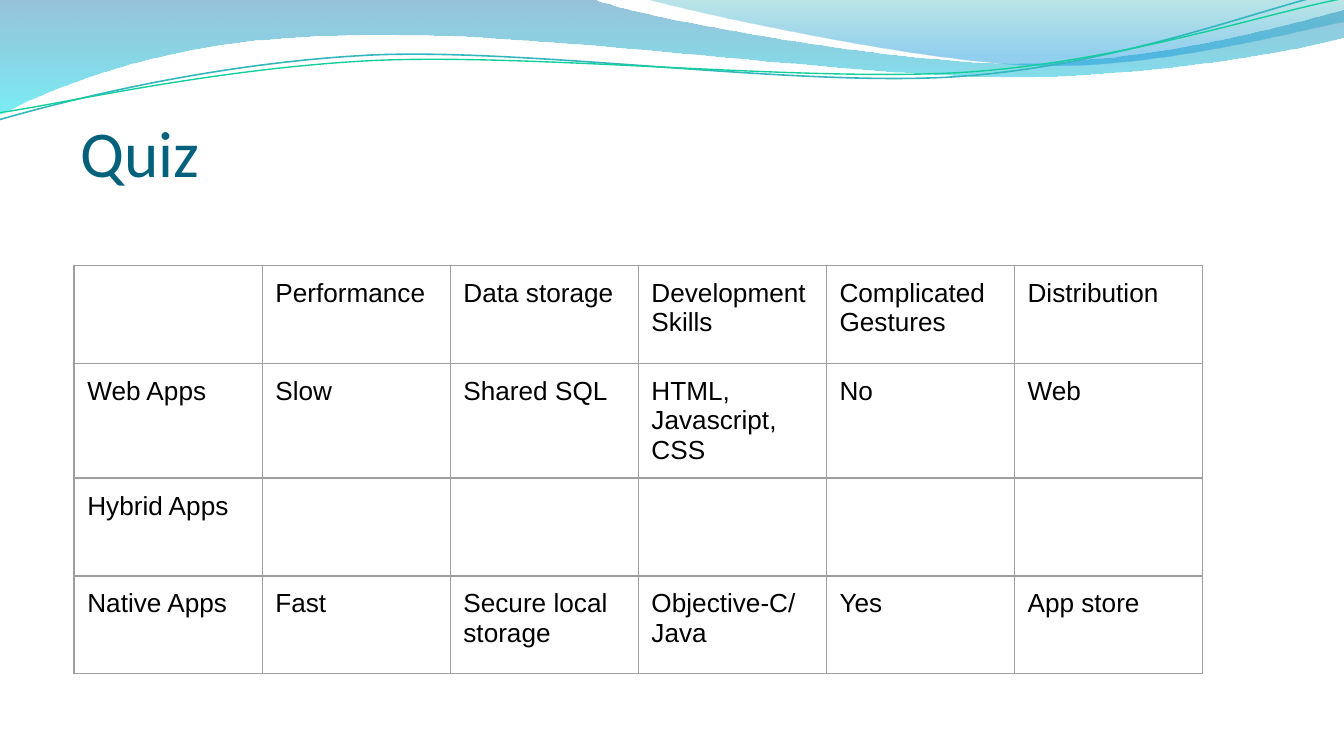
from lxml import etree
from pptx import Presentation
from pptx.dml.color import RGBColor
from pptx.enum.text import MSO_ANCHOR, MSO_AUTO_SIZE, PP_ALIGN
from pptx.oxml.ns import qn
from pptx.util import Cm, Pt

BOTTOM = MSO_ANCHOR.BOTTOM
NO_AUTOFIT = MSO_AUTO_SIZE.NONE
LEFT = PP_ALIGN.LEFT


def rgb(value):
    return RGBColor.from_string(value)


def add_wave(shapes, start, segments, close):
    """Draw segments in cm: 2 numbers make a line, 6 a cubic curve."""
    points = [(Cm(seg[k]), Cm(seg[k + 1])) for seg in segments for k in range(0, len(seg), 2)]
    builder = shapes.build_freeform(Cm(start[0]), Cm(start[1]))
    builder.add_line_segments(points, close=close)
    sp = builder.convert_to_shape()
    sp.shadow.inherit = False
    # Merge the three steps of each curve into one cubic segment
    steps = iter(list(sp._element.iter(qn("a:lnTo"))))
    for seg in segments:
        first = next(steps)
        if len(seg) == 6:
            first.tag = qn("a:cubicBezTo")
            for step in (next(steps), next(steps)):
                first.append(step[0])
                step.getparent().remove(step)
    return sp


prs = Presentation()
prs.slide_width, prs.slide_height = Cm(25.4), Cm(14.29)
s = prs.slides.add_slide(prs.slide_layouts[5])

# Translucent waves: start, segments, gradient stops (position, colour, opacity in %)
bands = [
    ((0, 0),
     [(11.18, -0.03), (12.09, 0.33, 16.87, 1.19, 19.25, 1.19),
      (21.67, 1.19, 24.33, 0.48, 25.4, 0.18), (25.43, 0.69),
      (24.97, 0.84, 22.1, 1.45, 18.95, 1.45), (15.8, 1.42, 9.7, 0.53, 6.53, 0.66),
      (3.28, 0.69, 1.17, 1.57, -0.03, 2.16), (0, 0)],
     [(0, "1476AB", 44), (100, "0CE0EC", 55)]),
    ((12.17, -0.03),
     [(12.93, 0.2, 17.32, 1.17, 19.53, 1.24), (21.74, 1.32, 24.41, 0.61, 25.4, 0.41),
      (25.4, 0), (12.17, -0.03)],
     [(0, "18A7B0", 29), (80, "0993DD", 44), (100, "0993DD", 44)]),
]
for start, segments, stops in bands:
    sp = add_wave(s.shapes, start, segments, True)
    sp.line.fill.background()
    sp.fill.gradient()
    sp.fill.gradient_angle = 270
    stop_list = next(sp._element.iter(qn("a:gsLst")))
    for old in list(stop_list):
        stop_list.remove(old)
    for pos, colour, opacity in stops:
        gs = etree.SubElement(stop_list, qn("a:gs"), pos=str(pos * 1000))
        clr = etree.SubElement(gs, qn("a:srgbClr"), val=colour)
        etree.SubElement(clr, qn("a:alpha"), val=str(opacity * 1000))

# Thin wave lines
wave_lines = [
    ((0, 2.26),
     [(1.22, 1.91, 4.01, 1.19, 7.04, 1.04), (10.06, 0.91, 15.04, 1.65, 18.08, 1.45),
      (21.16, 1.24, 23.85, 0.15, 25.35, -0.18)], "33B7BF", 0.85),
    ((0, 2.13),
     [(1.19, 1.96, 4.17, 1.27, 7.19, 1.14), (10.24, 1.02, 15.16, 1.55, 18.19, 1.37),
      (21.23, 1.17, 23.9, 0.25, 25.4, -0.03)], "10CF9B", 0.75),
]
for start, segments, colour, width in wave_lines:
    sp = add_wave(s.shapes, start, segments, False)
    sp.fill.background()
    sp.line.color.rgb = rgb(colour)
    sp.line.width = Pt(width)

# Title, in front of the waves
title = s.shapes.title
s.shapes._spTree.append(title._element)
title.left, title.top, title.width, title.height = Cm(1.27), Cm(0), Cm(22.86), Cm(3.86)
tf = title.text_frame
tf.auto_size = NO_AUTOFIT
tf.word_wrap = True
tf.vertical_anchor = BOTTOM
tf.margin_left = tf.margin_right = tf.margin_top = tf.margin_bottom = Cm(0.25)
p = tf.paragraphs[0]
p.alignment = LEFT
r = p.add_run()
r.text = "Quiz"
r.font.name, r.font.size = "Calibri", Pt(35)
r.font.color.rgb = rgb("04617B")

# Comparison table
rows = [
    ["", "Performance", "Data storage", "Development Skills", "Complicated Gestures",
     "Distribution"],
    ["Web Apps", "Slow", "Shared SQL", "HTML, Javascript, CSS", "No", "Web"],
    ["Hybrid Apps", "", "", "", "", ""],
    ["Native Apps", "Fast", "Secure local storage", "Objective-C/ Java", "Yes", "App store"],
]
table = s.shapes.add_table(len(rows), len(rows[0]), Cm(1.4), Cm(5.02),
                           Cm(21.33), Cm(7.4)).table
table.first_row = table.horz_banding = False
for i, row in enumerate(rows):
    for j, text in enumerate(row):
        cell = table.cell(i, j)
        cell.margin_left = cell.margin_right = Cm(0.25)
        cell.margin_top = cell.margin_bottom = Cm(0.25)
        # Borders come before the fill in the cell properties
        tcPr = cell._tc.get_or_add_tcPr()
        for side in ("a:lnL", "a:lnR", "a:lnT", "a:lnB"):
            ln = etree.SubElement(tcPr, qn(side), w=str(Pt(0.75)))
            fill = etree.SubElement(ln, qn("a:solidFill"))
            etree.SubElement(fill, qn("a:srgbClr"), val="9E9E9E")
        cell.fill.background()
        if text:
            r = cell.text_frame.paragraphs[0].add_run()
            r.text = text
            r.font.name, r.font.size = "Arial", Pt(14)
            r.font.color.rgb = rgb("000000")

prs.save("out.pptx")
